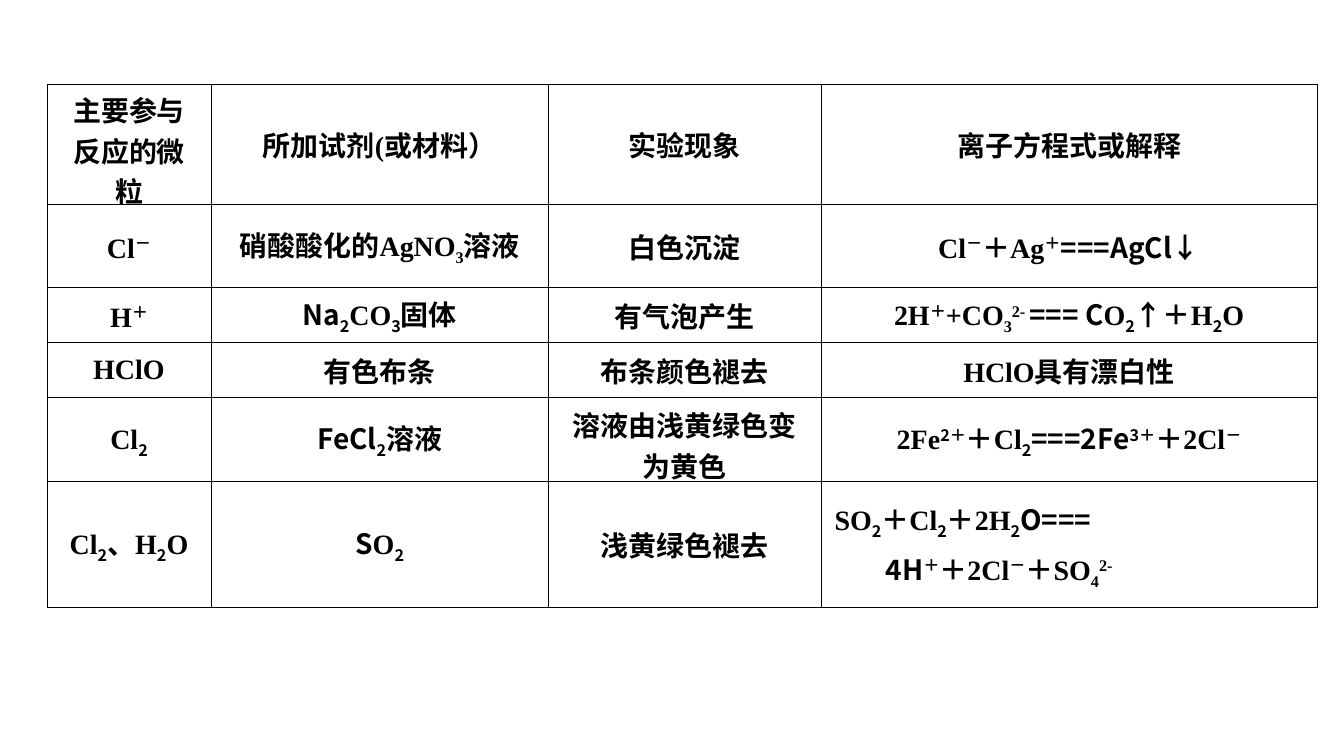
from lxml.etree import SubElement
from pptx import Presentation
from pptx.dml.color import RGBColor
from pptx.enum.text import MSO_ANCHOR, PP_ALIGN
from pptx.oxml.ns import qn
from pptx.util import Inches, Pt

BLACK = RGBColor(0, 0, 0)
BORDER = RGBColor(8, 0, 0)
LATIN_FONT = "Times New Roman"
CJK_FONT = "Noto Sans CJK SC"
BASELINES = {"_": -25000, "^": 30000}

COLUMN_WIDTHS = [1.22, 2.51, 2.03, 3.69]
ROW_HEIGHTS = [0.89, 0.62, 0.41, 0.41, 0.62, 0.94]
WRAPPED_TEXTS = ["主要参与反应的微粒", "溶液由浅黄绿色变为黄色"]

# "|" parts runs; a run may start with "*" (CJK font), then "_" or "^" (sub- or superscript).
ROWS = [
    [WRAPPED_TEXTS[0], "所加试剂(或材料）", "实验现象", "离子方程式或解释"],
    ["Cl|^－", "硝酸酸化的AgNO|_3|溶液", "白色沉淀", "Cl|^－|＋Ag|^＋|*===AgCl↓"],
    ["H|^＋", "*Na|*_2|CO|*_3|固体", "有气泡产生",
     "2H|^＋|+CO|_3|^2- |*=== C|O|*_2|*↑|＋H|*_2|O"],
    ["HClO", "有色布条", "布条颜色褪去", "HClO具有漂白性"],
    ["Cl|*_2", "*FeCl|*_2|溶液", WRAPPED_TEXTS[1],
     "2Fe|*^2|^＋|＋Cl|*_2|*===2Fe|*^3|^＋|＋2Cl|^－"],
    ["Cl|*_2|、H|*_2|O", "*S|O|*_2", "浅黄绿色褪去",
     "SO|*_2|＋Cl|*_2|＋2H|*_2|*O===\n*4H|^＋|＋2Cl|^－|＋SO|_4|^2-"],
]


class SlideBuilder:
    def __init__(self, slide, size=15):
        self.slide = slide
        self.size = Pt(size)

    def table(self, left, top, widths, heights, rows):
        frame = self.slide.shapes.add_table(
            len(heights), len(widths), Inches(left), Inches(top),
            Inches(sum(widths)), Inches(sum(heights)))
        table = frame.table
        table.first_row = table.horz_banding = False
        for column, width in zip(table.columns, widths):
            column.width = Inches(width)
        for row, height, texts in zip(table.rows, heights, rows):
            row.height = Inches(height)
            for cell, text in zip(row.cells, texts):
                self.cell(cell, text)

    def cell(self, cell, text):
        """Fill one cell; wrapped texts may reach past the bottom edge of their row."""
        cell.vertical_anchor = MSO_ANCHOR.MIDDLE
        cell.margin_left = cell.margin_right = Inches(0.1)
        wrapped = text in WRAPPED_TEXTS
        cell.margin_top = Inches(0.03 if wrapped else 0.04)
        cell.margin_bottom = Inches(-0.05 if wrapped else 0.04)
        self.borders(cell)
        cell.fill.background()
        lines = text.split("\n")
        for index, line in enumerate(lines):
            frame = cell.text_frame
            paragraph = frame.add_paragraph() if index else frame.paragraphs[0]
            paragraph.alignment = PP_ALIGN.LEFT if len(lines) > 1 else PP_ALIGN.CENTER
            paragraph.space_before = Pt(3)
            if index:
                paragraph._p.get_or_add_pPr().set("marL", str(Inches(0.38)))
            for part in line.split("|"):
                self.run(paragraph, part)

    def run(self, paragraph, part):
        latin = CJK_FONT if part.startswith("*") else LATIN_FONT
        part = part.removeprefix("*")
        run = paragraph.add_run()
        run.text = part.lstrip("_^")
        font = run.font
        font.name, font.size, font.bold = latin, self.size, True
        font.color.rgb = BLACK
        properties = run._r.get_or_add_rPr()
        SubElement(properties, qn("a:ea"), typeface=CJK_FONT)
        if part[0] in BASELINES:
            properties.set("baseline", str(BASELINES[part[0]]))

    def borders(self, cell):
        properties = cell._tc.get_or_add_tcPr()
        for side in "LRTB":
            line = SubElement(properties, qn(f"a:ln{side}"), w=str(Pt(0.5)))
            fill = SubElement(line, qn("a:solidFill"))
            SubElement(fill, qn("a:srgbClr"), val=str(BORDER))


def main():
    presentation = Presentation()
    presentation.slide_width = Inches(10)
    presentation.slide_height = Inches(10 * 9 / 16)
    slide = presentation.slides.add_slide(presentation.slide_layouts[6])
    SlideBuilder(slide).table(0.35, 0.63, COLUMN_WIDTHS, ROW_HEIGHTS, ROWS)
    presentation.save("out.pptx")


if __name__ == "__main__":
    main()
